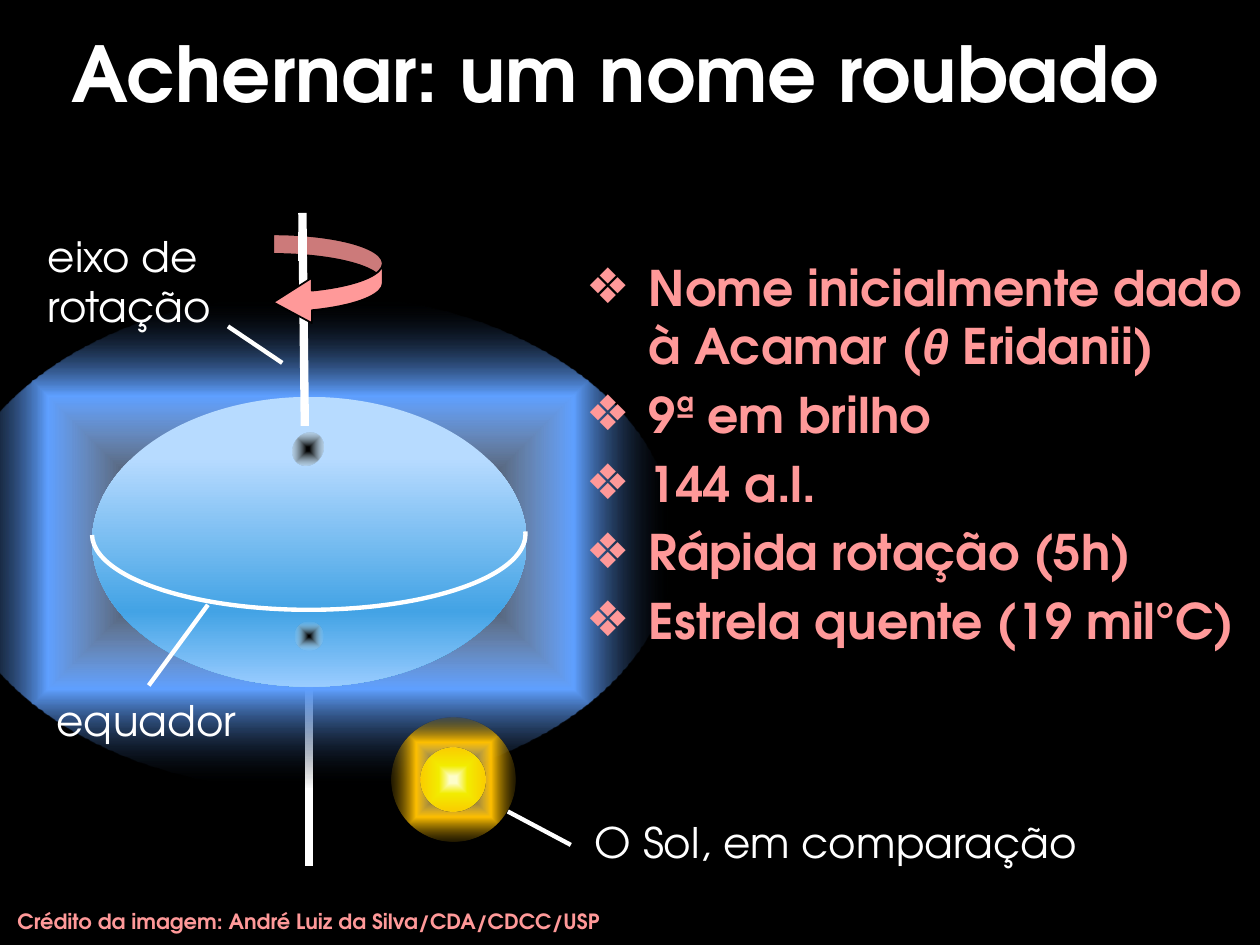
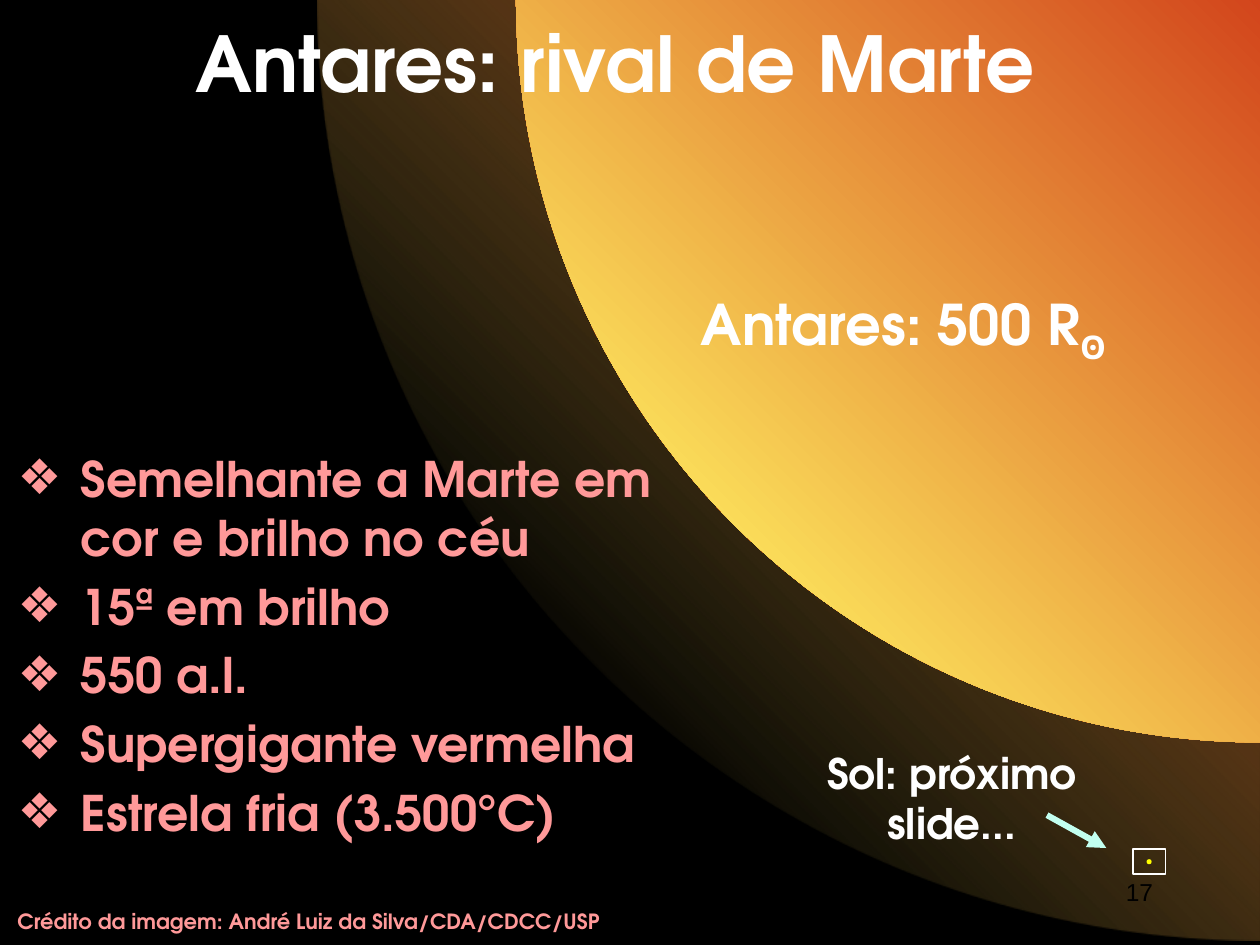
from lxml import etree
from pptx import Presentation
from pptx.dml.color import RGBColor
from pptx.enum.shapes import MSO_CONNECTOR, MSO_SHAPE as Preset
from pptx.enum.text import MSO_ANCHOR as Anchor, MSO_AUTO_SIZE as AutoSize, PP_ALIGN as Align
from pptx.oxml import parse_xml
from pptx.oxml.ns import qn
from pptx.util import Pt

# Shared look
WHITE = RGBColor(0xFF, 0xFF, 0xFF)
BLACK = RGBColor(0, 0, 0)
PINK = RGBColor(0xFF, 0x99, 0x99)
AQUA = RGBColor(0xC2, 0xFF, 0xF0)
YELLOW = RGBColor(0xFF, 0xFF, 0)
CREAM = RGBColor(0xFF, 0xFF, 0xCC)
LEMON = RGBColor(0xF4, 0xEE, 0)
AMBER = RGBColor(0xFF, 0xC0, 0)
GOLD = RGBColor(0xFD, 0xE6, 0x5D)
CRIMSON = RGBColor(0xC0, 0, 0)
ORANGE = RGBColor(0xFE, 0x73, 0x2F)
GLOW_BLUE = RGBColor(0x5F, 0xA0, 0xFF)
ICE = RGBColor(0xB7, 0xDB, 0xFF)
SKY = RGBColor(0x43, 0xA3, 0xE5)
PALE_SKY = RGBColor(0x99, 0xCC, 0xFF)
MINT = RGBColor(0xF0, 0xFF, 0xFB)
FONT = "TeX Gyre Adventor"
GREEK_FONT = "Arial"
DRAWING_NS = "http://schemas.openxmlformats.org/drawingml/2006/main"

# Content: each bullet is a list of (text, is Greek) runs
CREDIT = "Crédito da imagem: André Luiz da Silva/CDA/CDCC/USP"
ACHERNAR = {
    "title": "Achernar: um nome roubado",
    "title_top": 10.8,
    "bullets": [
        [("Nome inicialmente dado à Acamar (", False), ("θ ", True), ("Eridanii)", False)],
        [("9ª em brilho", False)],
        [("144 a.l.", False)],
        [("Rápida rotação (5h)", False)],
        [("Estrela quente (19 mil°C)", False)],
    ],
    "bullets_box": (327.6, 143.3, 392.4, 290.2),
}
ANTARES = {
    "title": "Antares: rival de Marte",
    "title_top": 5,
    "bullets": [
        [("Semelhante a Marte em cor e brilho no céu", False)],
        [("15ª em brilho", False)],
        [("550 a.l.", False)],
        [("Supergigante vermelha", False)],
        [("Estrela fria (3.500°C)", False)],
    ],
    "bullets_box": (2.9, 252.7, 378.7, 260.6),
}

# Gradients: (position %, colour, opacity %)
CENTRE, CORNER = (50, 50, 50, 50), (0, 100, 100, 0)
STAR_GLOW = [(0, WHITE, 0), (59, GLOW_BLUE, 100), (99, BLACK, 0)]
STAR_BODY = [(21, ICE, 100), (74, SKY, 100), (100, PALE_SKY, 100), (100, ICE, 100)]
SUN_GLOW = [(0, WHITE, 0), (49, AMBER, 100), (100, BLACK, 0)]
SUN_BODY = [(9, CREAM, 100), (35, LEMON, 100), (100, AMBER, 100), (100, WHITE, 9)]
POLE = [(6, BLACK, 100), (100, MINT, 0)]
HALO = [(13, GOLD, 0), (56, CRIMSON, 94), (71, ORANGE, 0)]
DISC = [(12, GOLD, 100), (66, CRIMSON, 100)]


def place(shape, box):
    shape.left, shape.top, shape.width, shape.height = map(Pt, box)


def add_preset(slide, preset, box, fill=None, line=None, weight=1, rotation=0):
    shape = slide.shapes.add_shape(preset, *map(Pt, box))
    shape.shadow.inherit = False
    shape.rotation = rotation
    if fill is None:
        shape.fill.background()
    else:
        shape.fill.solid()
        shape.fill.fore_color.rgb = fill
    if line is None:
        shape.line.fill.background()
    else:
        shape.line.color.rgb = line
        shape.line.width = Pt(weight)
    return shape


def add_gradient(slide, preset, box, stops, path_kind=None, focus=CENTRE, rotation=0):
    """Add a shape with a gradient: downwards, or along path_kind around focus."""
    shape = add_preset(slide, preset, box, rotation=rotation)
    stop_xml = "".join(
        f'<a:gs pos="{pos * 1000}"><a:srgbClr val="{colour}">'
        f'<a:alpha val="{opacity * 1000}"/></a:srgbClr></a:gs>'
        for pos, colour, opacity in stops)
    if path_kind:
        sides = " ".join(f'{side}="{part * 1000}"' for side, part in zip("ltrb", focus))
        course = f'<a:path path="{path_kind}"><a:fillToRect {sides}/></a:path>'
    else:
        course = '<a:lin ang="5400000" scaled="0"/>'
    gradient = parse_xml(f'<a:gradFill xmlns:a="{DRAWING_NS}" rotWithShape="1">'
                         f'<a:gsLst>{stop_xml}</a:gsLst>{course}</a:gradFill>')
    properties = shape.element.spPr
    properties.replace(properties.find(qn("a:noFill")), gradient)
    return shape


def add_line(slide, start, end, weight=2.5, colour=WHITE, arrow=False):
    line = slide.shapes.add_connector(MSO_CONNECTOR.STRAIGHT, *map(Pt, start + end))
    line.line.color.rgb = colour
    line.line.width = Pt(weight)
    if arrow:
        etree.SubElement(line.line._get_or_add_ln(), qn("a:tailEnd"), type="triangle")
    etree.SubElement(line.element.spPr, qn("a:effectLst"))
    return line


def add_run(paragraph, text, size, colour=WHITE, bold=False, font=FONT):
    run = paragraph.add_run()
    run.text = text
    run.font.size = Pt(size)
    run.font.name = font
    run.font.bold = bold
    run.font.color.rgb = colour
    return run


def add_label(slide, box, text, size=24, colour=WHITE, bold=False, align=Align.LEFT,
              font=FONT, space_before=0):
    label = slide.shapes.add_textbox(*map(Pt, box))
    label.text_frame.word_wrap = True
    paragraph = label.text_frame.paragraphs[0]
    paragraph.alignment = align
    paragraph.space_before = Pt(space_before)
    add_run(paragraph, text, size, colour, bold, font)
    return label


def bring_to_front(shape):
    shape.element.getparent().append(shape.element)


def add_title(slide, star):
    title = slide.shapes.title
    place(title, (17.3, star["title_top"], 668.9, 60.5))
    bring_to_front(title)
    frame = title.text_frame
    frame.auto_size = AutoSize.NONE
    frame.vertical_anchor = Anchor.MIDDLE
    frame.paragraphs[0].alignment = Align.CENTER
    add_run(frame.paragraphs[0], star["title"], 44, bold=True)


def add_bullets(slide, star):
    body = slide.placeholders[1]
    place(body, star["bullets_box"])
    bring_to_front(body)
    frame = body.text_frame
    frame.auto_size = AutoSize.NONE
    frame.vertical_anchor = Anchor.TOP
    for index, bullet in enumerate(star["bullets"]):
        paragraph = frame.add_paragraph() if index else frame.paragraphs[0]
        paragraph.alignment = Align.LEFT
        paragraph.space_before = Pt(5.6)
        for text, greek in bullet:
            run = add_run(paragraph, text, 28, PINK, True, GREEK_FONT if greek else FONT)
            run.font.italic = greek
        # Hanging bullet
        properties = paragraph._p.get_or_add_pPr()
        properties.set("marL", str(Pt(36)))
        properties.set("indent", str(-Pt(36)))
        bullet_colour = etree.SubElement(properties, qn("a:buClr"))
        etree.SubElement(bullet_colour, qn("a:srgbClr"), val=str(PINK))
        etree.SubElement(properties, qn("a:buChar"), char="❖")


def add_credit(slide):
    add_label(slide, (2.9, 515.5, 354.2, 21.6), CREDIT, 12, PINK, True)


def new_slide(deck):
    slide = deck.slides.add_slide(deck.slide_layouts[0])
    slide.background.fill.solid()
    slide.background.fill.fore_color.rgb = BLACK
    return slide


def build_achernar(deck):
    slide = new_slide(deck)
    # Flattened star over the lower half of its axis
    add_line(slide, (176.4, 494.6), (176.4, 391), 4.75)
    add_gradient(slide, Preset.OVAL, (-31, 167.8, 416.2, 283.7), STAR_GLOW, "shape")
    add_gradient(slide, Preset.OVAL, (52.6, 226.8, 248.4, 165.6), STAR_BODY)
    add_title(slide, ACHERNAR)

    # Upper axis, rotation arrow and equator
    add_line(slide, (174.2, 243.4), (172.8, 121.7), 4.75)
    spin = add_preset(slide, Preset.CURVED_RIGHT_ARROW, (156.2, 133.9, 62.6, 51.8), PINK, BLACK)
    spin.element.spPr.find(qn("a:xfrm")).set("flipH", "1")
    for index, value in enumerate((0.217, 0.652, 0.426)):
        spin.adjustments[index] = value
    equator = add_preset(slide, Preset.ARC, (52.6, 262.1, 247.7, 86.4), line=WHITE, weight=2.5)
    equator.adjustments[0], equator.adjustments[1] = 215.56, 107.87
    add_line(slide, (172.8, 149), (172.8, 132.5), 4.75)

    # Labels with their leader lines
    add_label(slide, (25.2, 393.1, 130.3, 39.6), "equador", space_before=4.8)
    add_line(slide, (85, 391.7), (118.8, 345.6))
    add_label(slide, (20.2, 128.2, 130.3, 39.6), "eixo de rotação", space_before=4.8)
    add_line(slide, (161.3, 207.4), (130.3, 186.5))
    add_bullets(slide, ACHERNAR)

    # The Sun, for scale
    add_gradient(slide, Preset.OVAL, (223.9, 410.4, 70.6, 70.6), SUN_GLOW, "shape", rotation=345)
    add_gradient(slide, Preset.OVAL, (240.5, 427, 36.7, 36.7), SUN_BODY, "shape", rotation=345)
    sun_label = add_label(slide, (326.2, 463, 349.9, 39.6), "O Sol, em comparação",
                          space_before=4.8)
    sun_label.text_frame.margin_left = Pt(13.8)
    sun_leader = add_line(slide, (326.2, 482.8), (290.2, 463.7))
    sun_leader.begin_connect(sun_label, 1)
    add_credit(slide)

    # Poles
    add_gradient(slide, Preset.OVAL, (167.8, 247, 16.6, 19.4), POLE, "shape", rotation=34.2)
    add_gradient(slide, Preset.OVAL, (168.5, 355, 16.6, 16.6), POLE, "shape")


def build_antares(deck):
    slide = new_slide(deck)
    # Quarter discs around the top right corner
    centre_x, centre_y = 720, -1
    for radius, stops in ((538.5, HALO), (425.2, DISC)):
        box = (centre_x - radius, centre_y - radius, 2 * radius, 2 * radius)
        add_gradient(slide, Preset.ARC, box, stops, "circle", CORNER, 180)
    add_title(slide, ANTARES)
    add_bullets(slide, ANTARES)

    # The Sun, framed and pointed at
    add_preset(slide, Preset.RECTANGLE, (647.3, 485.3, 18.7, 14.4), line=WHITE)
    add_line(slide, (598.3, 465.8), (632.2, 484.6), 3.5, AQUA, arrow=True)
    add_preset(slide, Preset.OVAL, (655.2, 491, 2.9, 2.9), YELLOW)
    add_label(slide, (433.4, 423.4, 221, 85), "Sol: próximo slide...", bold=True,
              align=Align.CENTER)
    number = add_label(slide, (516.2, 491.8, 149.8, 36), "17", 14, BLACK,
                       align=Align.RIGHT, font="Arial")
    number.text_frame.vertical_anchor = Anchor.MIDDLE

    # Radius in solar units
    radius_label = add_label(slide, (371.5, 162, 289.4, 85), "Antares: 500 R", 32,
                             bold=True, align=Align.CENTER)
    sun_sign = add_run(radius_label.text_frame.paragraphs[0], "ʘ", 32, bold=True)
    sun_sign.font._element.set("baseline", "-25000")
    add_credit(slide)


def main():
    deck = Presentation()
    deck.slide_width, deck.slide_height = Pt(720), Pt(540)
    build_achernar(deck)
    build_antares(deck)
    deck.save("out.pptx")


if __name__ == "__main__":
    main()
